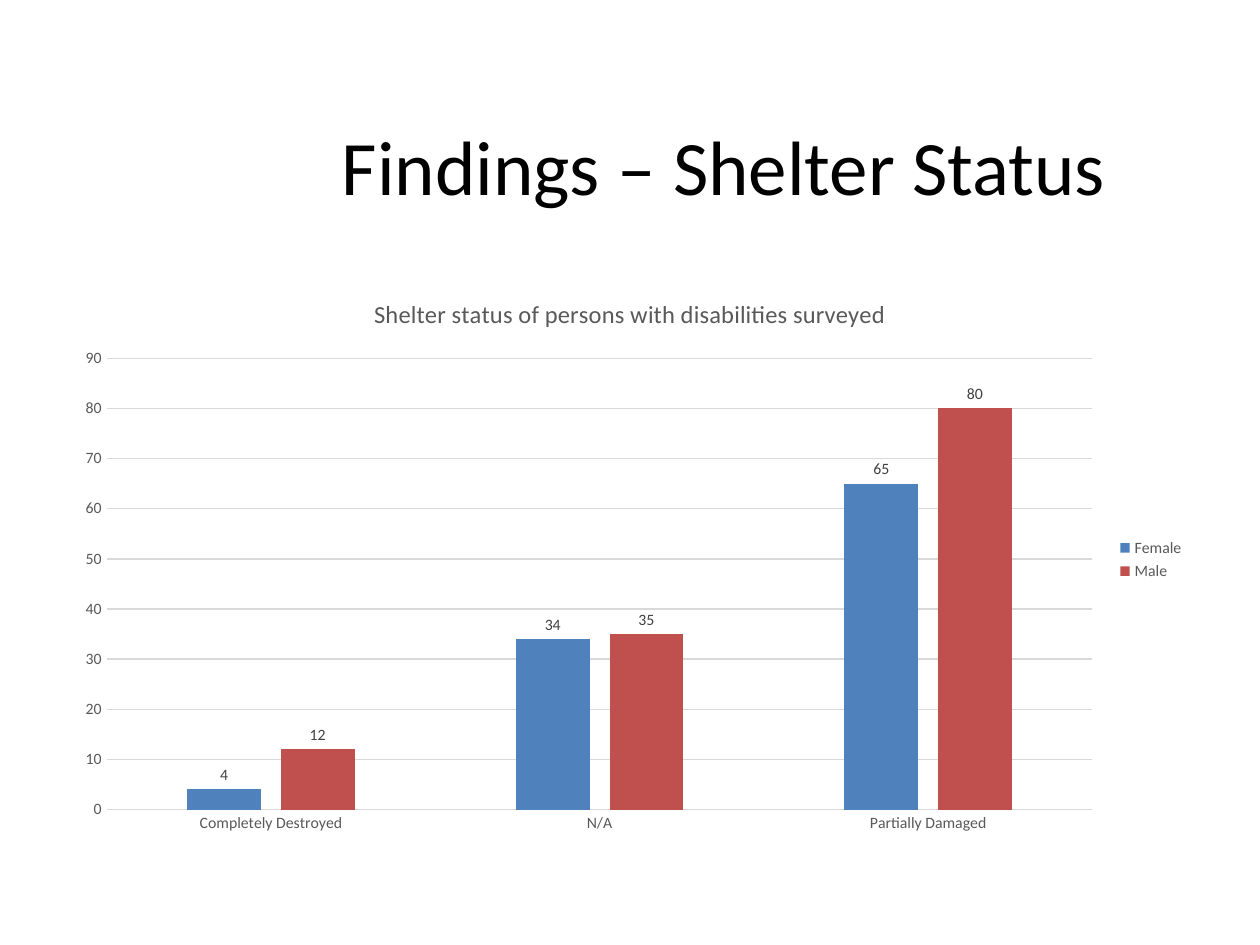
from pptx import Presentation
from pptx.chart.data import CategoryChartData
from pptx.dml.color import RGBColor
from pptx.enum.chart import (XL_CHART_TYPE, XL_LABEL_POSITION,
                             XL_LEGEND_POSITION, XL_TICK_MARK)
from pptx.enum.text import MSO_ANCHOR, PP_ALIGN
from pptx.util import Cm, Pt

COLUMN = XL_CHART_TYPE.COLUMN_CLUSTERED
OUTSIDE = XL_LABEL_POSITION.OUTSIDE_END
RIGHT = XL_LEGEND_POSITION.RIGHT
NO_TICK = XL_TICK_MARK.NONE
MIDDLE = MSO_ANCHOR.MIDDLE
CENTER = PP_ALIGN.CENTER

BLACK = RGBColor(0x00, 0x00, 0x00)
DARK = RGBColor(0x40, 0x40, 0x40)
GRAY = RGBColor(0x59, 0x59, 0x59)
PALE = RGBColor(0xD9, 0xD9, 0xD9)
BLUE = RGBColor(0x4F, 0x81, 0xBD)
RED = RGBColor(0xC0, 0x50, 0x4D)

FACE = "Calibri"
STATES = ["Completely Destroyed", "N/A", "Partially Damaged"]
GROUPS = [("Female", (4, 34, 65), BLUE), ("Male", (12, 35, 80), RED)]


def set_font(font, size, color):
    font.name = FACE
    font.size = Pt(size)
    font.bold = False
    font.color.rgb = color


def set_line(line, color):
    line.color.rgb = color
    line.width = Pt(0.75)


def add_title(slide, text):
    title = slide.shapes.title
    title.left, title.top = Cm(4.98), Cm(1.73)
    title.width, title.height = Cm(19.23), Cm(3.18)
    frame = title.text_frame
    frame.vertical_anchor = MIDDLE
    para = frame.paragraphs[0]
    para.alignment = CENTER
    run = para.add_run()
    run.text = text
    set_font(run.font, 44, BLACK)


def add_heading(chart, text):
    chart.has_title = True
    run = chart.chart_title.text_frame.paragraphs[0].add_run()
    run.text = text
    set_font(run.font, 14, GRAY)
    chart.chart_title.include_in_layout = False


def style_axes(chart):
    for axis in (chart.category_axis, chart.value_axis):
        axis.major_tick_mark = axis.minor_tick_mark = NO_TICK
        set_font(axis.tick_labels.font, 9, GRAY)
    set_line(chart.category_axis.format.line, PALE)
    scale = chart.value_axis
    scale.format.line.fill.background()
    scale.minimum_scale, scale.maximum_scale = 0, 90
    scale.major_unit = 10
    scale.has_major_gridlines = True
    set_line(scale.major_gridlines.format.line, PALE)


def style_bars(plot):
    plot.gap_width = 219
    plot.overlap = -27
    plot.vary_by_categories = False
    for bars, (_, _, color) in zip(plot.series, GROUPS):
        bars.format.fill.solid()
        bars.format.fill.fore_color.rgb = color
        bars.invert_if_negative = False
        labels = bars.data_labels
        labels.show_value = True
        labels.position = OUTSIDE
        set_font(labels.font, 9, DARK)


def add_legend(chart):
    chart.has_legend = True
    chart.legend.position = RIGHT
    chart.legend.include_in_layout = False
    set_font(chart.legend.font, 9, GRAY)


def add_chart(slide, heading):
    data = CategoryChartData()
    data.categories = STATES
    for name, counts, _ in GROUPS:
        data.add_series(name, counts)
    chart = slide.shapes.add_chart(COLUMN, Cm(1.27), Cm(5.54), Cm(22.86),
                                   Cm(11.48), data).chart
    set_font(chart.font, 10, BLACK)
    add_heading(chart, heading)
    style_axes(chart)
    style_bars(chart.plots[0])
    add_legend(chart)


def main():
    deck = Presentation()
    deck.slide_width, deck.slide_height = Cm(25.4), Cm(19.05)
    slide = deck.slides.add_slide(deck.slide_layouts[5])
    add_title(slide, "Findings – Shelter Status")
    add_chart(slide, "Shelter status of persons with disabilities surveyed")
    deck.save("out.pptx")


if __name__ == "__main__":
    main()
